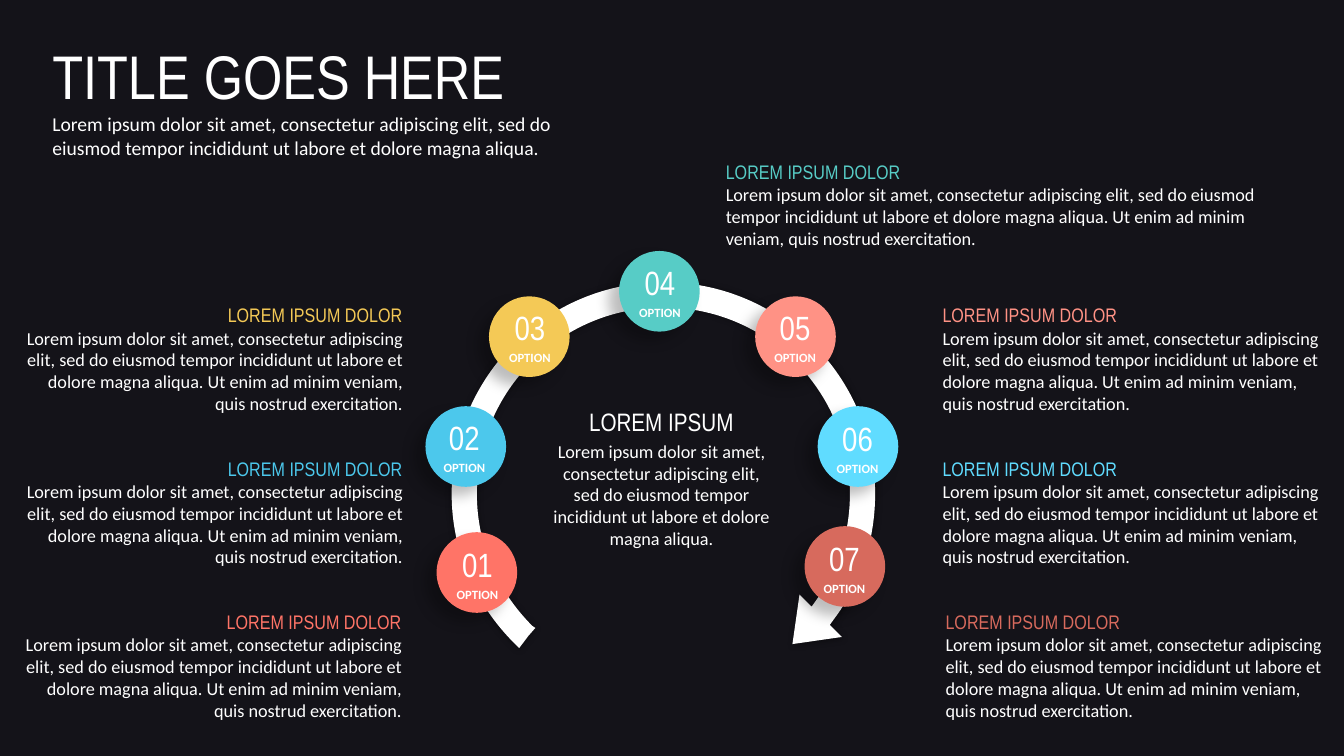
import pptx
import pptx.util
import pptx.dml.color
import pptx.enum.shapes
import pptx.enum.text
import pptx.oxml

Inches = pptx.util.Inches
Pt = pptx.util.Pt
ALIGN = pptx.enum.text.PP_ALIGN
SHAPE = pptx.enum.shapes.MSO_SHAPE
HEAD, BODY = "Arial Narrow", "Calibri"
WHITE = "FFFFFF"
SHORT = "Lorem ipsum dolor sit amet, consectetur adipiscing elit, sed do eiusmod tempor incididunt ut labore et dolore magna aliqua."
LONG = SHORT + " Ut enim ad minim veniam, quis nostrud exercitation."
NS = "http://schemas.openxmlformats.org/drawingml/2006/main"


def color(code):
    return pptx.dml.color.RGBColor.from_string(code)


def apply(part, values):
    for name, value in values.items():
        setattr(part, name, value)


def node(tag, inner="", **marks):
    """Drawing element with the given attributes."""
    text = " ".join(f'{key}="{value}"' for key, value in marks.items())
    return pptx.oxml.parse_xml(f'<a:{tag} xmlns:a="{NS}" {text}>{inner}</a:{tag}>')


def paint(shape, code):
    """Solid fill without outline or shadow."""
    shape.fill.solid()
    shape.fill.fore_color.rgb = color(code)
    shape.line.fill.background()
    shape.shadow.inherit = False


def shade(shape, alpha, blur, dist, angle):
    """Soft outer shadow."""
    dark = f'<a:srgbClr val="000000"><a:alpha val="{alpha * 1000}"/></a:srgbClr>'
    shape._element.spPr.find(f"{{{NS}}}effectLst").append(
        node("outerShdw", dark, blurRad=Pt(blur), dist=Pt(dist),
             dir=angle * 60000, algn="ctr", rotWithShape=0))


def write(shapes, box, lines, align=ALIGN.LEFT, gap=0):
    """Text box; each line is (text, size, font, color, bold)."""
    frame = shapes.add_textbox(*map(Inches, box)).text_frame
    apply(frame, {"word_wrap": True,
                  "auto_size": pptx.enum.text.MSO_AUTO_SIZE.SHAPE_TO_FIT_TEXT})
    for i, (text, size, face, code, bold) in enumerate(lines):
        para = frame.paragraphs[0] if i == 0 else frame.add_paragraph()
        para.alignment = align
        if i and gap:
            para.space_before = Pt(gap)
        run = para.add_run()
        run.text = text
        apply(run.font, {"size": Pt(size), "name": face, "bold": bold})
        run.font.color.rgb = color(code)


def ground(slide, box):
    """Violet background under a dark veil."""
    back = slide.background.fill
    back.solid()
    back.fore_color.rgb = color("524E67")
    veil = slide.shapes.add_shape(SHAPE.RECTANGLE, *map(Inches, box))
    paint(veil, "000000")
    tint = veil._element.spPr.find(f"{{{NS}}}solidFill")[0]
    tint.append(node("alpha", val=75000))


def title(slide, box):
    write(slide.shapes, box, [("TITLE GOES HERE", 44, HEAD, WHITE, False),
                              (SHORT, 14, BODY, WHITE, False)])


def ring(slide, box):
    """Open ring that ends in an arrowhead; three points make a curve."""
    left, top = box[:2]
    start = (2.1, 0)
    steps = [
        # Outer edge
        [(3.26, 0), (4.2, 0.94), (4.2, 2.1)],
        [(4.2, 2.54), (4.07, 2.95), (3.83, 3.29)],
        # Arrowhead
        [(3.75, 3.4)], [(3.87, 3.52)], [(3.38, 3.59)],
        [(3.45, 3.1)], [(3.57, 3.22)], [(3.62, 3.15)],
        # Inner edge
        [(3.83, 2.85), (3.95, 2.49), (3.95, 2.1)],
        [(3.95, 1.08), (3.13, 0.25), (2.1, 0.25)],
        [(1.08, 0.25), (0.25, 1.08), (0.25, 2.1)],
        [(0.25, 2.61), (0.46, 3.07), (0.8, 3.41)],
        # Tail and outer edge
        [(0.83, 3.43)], [(0.76, 3.51)], [(0.67, 3.63)], [(0.62, 3.58)],
        [(0.24, 3.2), (0, 2.68), (0, 2.1)],
        [(0, 0.94), (0.94, 0), start],
    ]

    def spot(point):
        return Inches(left + point[0]), Inches(top + point[1])

    pen = slide.shapes.build_freeform(*spot(start))
    pen.add_line_segments([spot(p) for step in steps for p in step], close=True)
    band = pen.convert_to_shape()
    # Merge each run of three points into one curve
    lines = iter(list(band._element.spPr.iter(f"{{{NS}}}lnTo")))
    for step in steps:
        parts = [next(lines) for _ in step]
        if len(parts) == 3:
            curve = node("cubicBezTo")
            parts[0].addprevious(curve)
            for part in parts:
                curve.append(part[0])
                part.getparent().remove(part)
    paint(band, WHITE)
    shade(band, 40, 5, 0, 0)


def badge(slide, box, label, code, shift):
    """Numbered disc."""
    left, top, wide, high = box
    group = slide.shapes.add_group_shape()
    disc = group.shapes.add_shape(SHAPE.OVAL, *map(Inches, box))
    paint(disc, code)
    shade(disc, 25, 10, 10, 140)
    write(group.shapes,
          (left + shift[0], top + shift[1], wide - 0.11, high - 0.11),
          [(label, 24, HEAD, WHITE, False), ("OPTION", 9, BODY, WHITE, True)],
          ALIGN.CENTER, 1.8)


def panel(slide, box, code, align):
    """Colored heading over a paragraph."""
    write(slide.shapes, box, [("LOREM IPSUM DOLOR", 14, HEAD, code, False),
                              (LONG, 13, BODY, WHITE, False)], align)


def center(slide, box):
    write(slide.shapes, box, [("LOREM IPSUM", 18, HEAD, WHITE, False),
                              (SHORT, 13, BODY, WHITE, False)],
          ALIGN.CENTER, 2.6)


def main():
    deck = pptx.Presentation()
    apply(deck, {"slide_width": Inches(13.33), "slide_height": Inches(7.5)})
    slide = deck.slides.add_slide(deck.slide_layouts[6])

    ground(slide, (0, 0, 13.33, 7.5))
    ring(slide, (4.48, 2.8, 4.2, 3.63))
    title(slide, (0.42, 0.33, 5.81, 1.31))
    center(slide, (5.38, 3.98, 2.36, 1.54))

    # Options: color, disc corner, label shift, panel box
    rows = [2.96, 4.48, 6]
    options = [
        ("FF7467", (4.33, 5.28), (0.06, 0.07), (0.08, rows[2], 4, 1.21)),
        ("4CC8EC", (4.22, 4.03), (0.04, 0.06), (0.09, rows[1], 4, 1.21)),
        ("F4C956", (4.85, 2.94), (0.06, 0.06), (0.09, rows[0], 4, 1.21)),
        ("57CCC6", (6.14, 2.49), (0.06, 0.06), (7.1, 1.54, 5.61, 0.99)),
        ("FF9285", (7.49, 2.94), (0.05, 0.06), (9.25, rows[0], 4, 1.21)),
        ("60DCFF", (8.11, 4.03), (0.05, 0.07), (9.25, rows[1], 4, 1.21)),
        ("D76A5D", (7.98, 5.22), (0.05, 0.07), (9.28, rows[2], 4, 1.21)),
    ]
    for i, (code, spot, shift, box) in enumerate(options, 1):
        badge(slide, (*spot, 0.8, 0.8), f"{i:02d}", code, shift)
        panel(slide, box, code, ALIGN.RIGHT if i < 4 else ALIGN.LEFT)

    deck.save("out.pptx")


if __name__ == "__main__":
    main()
